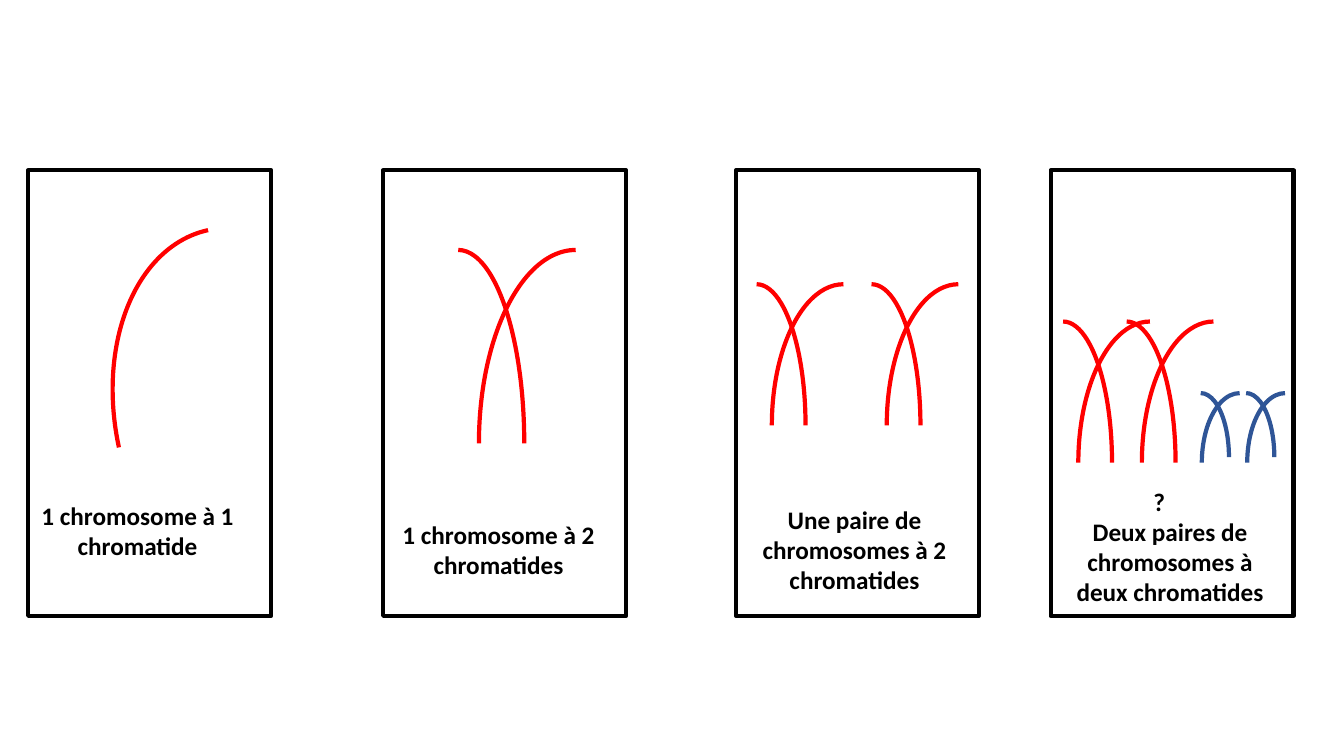
"""Draw four framed cards that show chromosomes with one or two chromatids."""
from dataclasses import dataclass
from pptx import Presentation
from pptx.dml.color import RGBColor as Rgb
from pptx.enum.shapes import MSO_SHAPE as Form
from pptx.enum.text import MSO_AUTO_SIZE as Fit, PP_ALIGN as Align
from pptx.util import Inches, Pt


@dataclass(frozen=True)
class Theme:
    """Hold the colours, type and line sizes."""
    ink: str = "000000"
    red: str = "FF0000"
    blue: str = "2F5597"
    font: str = "Calibri"
    size: int = 18
    line: int = 3


def cell(count):
    """Turn grid columns or rows, ten to the inch, into a length."""
    return Inches(count / 10)


def write(frame, text, *, font, size, color, bold=True, align=Align.CENTER):
    """Put one formatted paragraph in a text frame."""
    para = frame.paragraphs[0]
    para.alignment = align
    run = para.add_run()
    run.text = text
    run.font.name, run.font.size, run.font.bold = font, Pt(size), bold
    run.font.color.rgb = Rgb.from_string(color)


class Board:
    """Hold the style and the slide being drawn."""

    def __init__(self, slide, theme):
        """Keep the slide and theme."""
        self.slide, self.theme = slide, theme

    def shape(self, form, area, color, host=None):
        """Draw an unfilled outline on the slide or in a group."""
        shapes = (host or self.slide).shapes
        item = shapes.add_shape(form, *map(cell, area))
        item.shadow.inherit = False
        item.fill.background()
        item.line.color.rgb = Rgb.from_string(color)
        item.line.width = Pt(self.theme.line)
        return item

    def card(self, left):
        """Draw a black frame."""
        self.shape(Form.RECTANGLE, (left, *CARD), self.theme.ink)

    def arc(self, area, color, host=None, flip=False, turn=0):
        """Draw one chromatid."""
        item = self.shape(Form.ARC, area, color, host)
        item.rotation = turn
        if flip:
            item.element.spPr.xfrm.set("flipH", "1")

    def pair(self, left, top, size, color):
        """Draw two crossed chromatids as a group."""
        host = self.slide.shapes.add_group_shape()
        wide, high, step, span, tall = size
        self.arc((left, top, wide, high), color, host)
        self.arc((left + step, top, span, tall), color, host, flip=True)

    def label(self, text, area, align=Align.CENTER):
        """Add a bold caption."""
        box = self.slide.shapes.add_textbox(*map(cell, area))
        frame = box.text_frame
        frame.word_wrap = True
        frame.auto_size = Fit.SHAPE_TO_FIT_TEXT
        look = self.theme
        write(frame, text, font=look.font, size=look.size,
              color=look.ink, align=align)


CARD = (16.9, 24.1, 44.2)
LARGE = (13.1, 38.4, 8.6, 19.2, 38.4)
MID = (9.7, 28, 6.35, 14.2, 28)
SMALL = (5.6, 12.7, 2.9, 7.5, 13.8)
CARDS = (2.8, 38, 73, 104.2)
LABELS = (
    ("1 chromosome à 1 chromatide", (2.8, 49.1, 21.7, 7.1)),
    ("1 chromosome à 2 chromatides", (38.6, 51, 21.7, 7.1)),
    ("Une paire de chromosomes à 2 chromatides", (73.9, 49.5, 21.7, 10.1)),
    ("Deux paires de chromosomes à deux chromatides",
     (105.2, 50.7, 21.7, 10.1)),
)


def main():
    """Build and save the slide."""
    deck = Presentation()
    deck.slide_width, deck.slide_height = Inches(13.33), Inches(7.5)
    look = Theme()
    board = Board(deck.slides.add_slide(deck.slide_layouts[6]), look)
    for left in CARDS:
        board.card(left)
    board.arc((11.5, 22.4, 26.4, 38.4), look.red, flip=True, turn=347.8)
    board.pair(38.9, 24.8, LARGE, look.red)
    for left, top in ((70.2, 28.2), (81.6, 28.2), (100.6, 31.9), (106.9, 31.9)):
        board.pair(left, top, MID, look.red)
    for left in (116.3, 120.8):
        board.pair(left, 39, SMALL, look.blue)
    for text, area in LABELS:
        board.label(text, area)
    board.label("?", (113.4, 47.8, 14, 4), Align.LEFT)
    deck.save("out.pptx")


if __name__ == "__main__":
    main()
